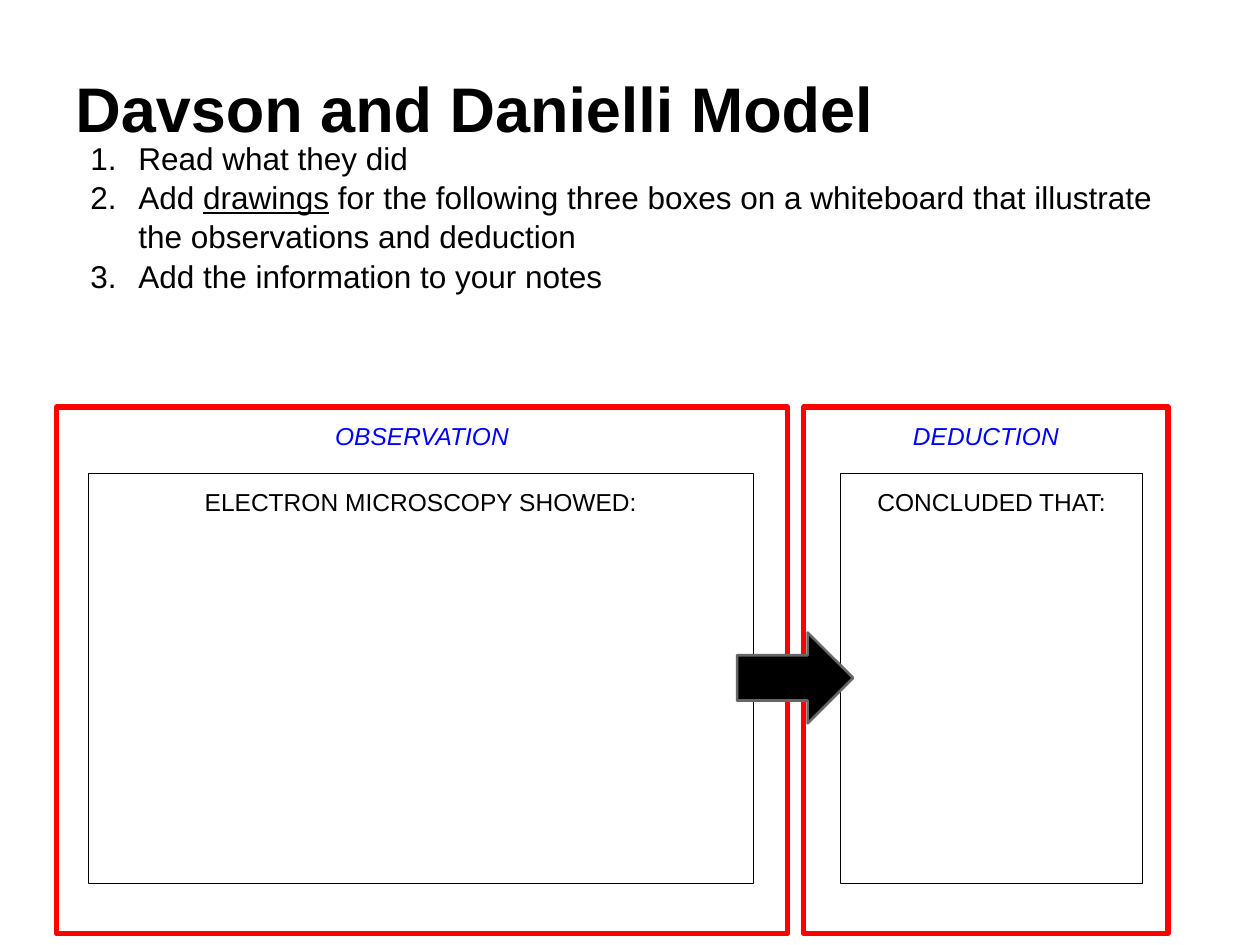
from pptx import Presentation
from pptx import util as u
from pptx.dml.color import RGBColor
from pptx.enum import shapes, text
from pptx.oxml.xmlchemy import OxmlElement

COLORS = {"red": "FF0000", "blue": "0000FF", "black": "000000", "gray": "666666"}

prs = Presentation()
prs.slide_width, prs.slide_height = u.Inches(10), u.Inches(7.5)
s = prs.slides.add_slide(prs.slide_layouts[6])


def add_box(kind, left, top, width, height, line=None, weight=0.75):
    """Add a text box, or an unfilled outlined shape when a kind is given."""
    place = [u.Inches(v) for v in (left, top, width, height)]
    if kind is None:
        sp = s.shapes.add_textbox(*place)
    else:
        sp = s.shapes.add_shape(kind, *place)
        sp.shadow.inherit = False
        sp.fill.background()
        sp.line.color.rgb = RGBColor.from_string(COLORS[line])
        sp.line.width = u.Pt(weight)
        sp.line._get_or_add_ln().append(OxmlElement("a:round"))
    tf = sp.text_frame
    frame = {"word_wrap": True, "vertical_anchor": text.MSO_ANCHOR.TOP}
    frame |= {f"margin_{side}": u.Inches(0.1) for side in ("left", "top", "right", "bottom")}
    for name, value in frame.items():
        setattr(tf, name, value)
    return sp


def add_run(p, words, size, color="black", **style):
    r = p.add_run()
    r.text = words
    r.font.color.rgb = RGBColor.from_string(COLORS[color])
    for name, value in {"name": "Arial", "size": u.Pt(size), **style}.items():
        setattr(r.font, name, value)


# Observation and deduction panels: a red frame around a black drawing box
frame_top, frame_h = 3.23, 4.18
box_top, box_h = 3.76, 3.25
panels = [
    ("OBSERVATION", 0.45, 5.8, "ELECTRON MICROSCOPY SHOWED:", 0.7, 5.28),
    ("DEDUCTION", 6.38, 2.89, "CONCLUDED THAT:", 6.67, 2.4),
]
for heading, frame_x, frame_w, caption, box_x, box_w in panels:
    for words, place, line, weight, color, italic in (
        (heading, (frame_x, frame_top, frame_w, frame_h), "red", 3, "blue", True),
        (caption, (box_x, box_top, box_w, box_h), "black", 0.75, "black", False),
    ):
        sp = add_box(shapes.MSO_SHAPE.RECTANGLE, *place, line, weight)
        p = sp.text_frame.paragraphs[0]
        p.alignment = text.PP_ALIGN.CENTER
        p.line_spacing = 1.04
        add_run(p, words, 14, color, italic=italic)

# Title
tf = add_box(None, 0.5, 0, 9, 1.25).text_frame
tf.vertical_anchor = text.MSO_ANCHOR.BOTTOM
add_run(tf.paragraphs[0], "Davson and Danielli Model", 36, bold=True)

# Numbered instructions, each a list of (words, underlined)
steps = [
    [("Read what they did", False)],
    [("Add ", False), ("drawings", True),
     (" for the following three boxes on a whiteboard that illustrate "
      "the observations and deduction", False)],
    [("Add the information to your notes", False)],
]
tf = add_box(None, 0.5, 0.99, 9, 6.2).text_frame
for i, step in enumerate(steps):
    p = tf.add_paragraph() if i else tf.paragraphs[0]
    p.line_spacing = 1.04
    pPr = p._p.get_or_add_pPr()
    pPr.set("marL", str(u.Inches(0.5)))
    pPr.set("indent", str(u.Inches(-0.38)))
    number = OxmlElement("a:buAutoNum")
    number.set("type", "arabicPeriod")
    pPr.append(number)
    for words, underline in step:
        add_run(p, words, 18, underline=underline)

# Arrow from observation to deduction
sp = add_box(shapes.MSO_SHAPE.RIGHT_ARROW, 5.85, 5.02, 0.92, 0.72, "gray", 1.5)
sp.fill.solid()
sp.fill.fore_color.rgb = RGBColor.from_string(COLORS["black"])

prs.save("out.pptx")
